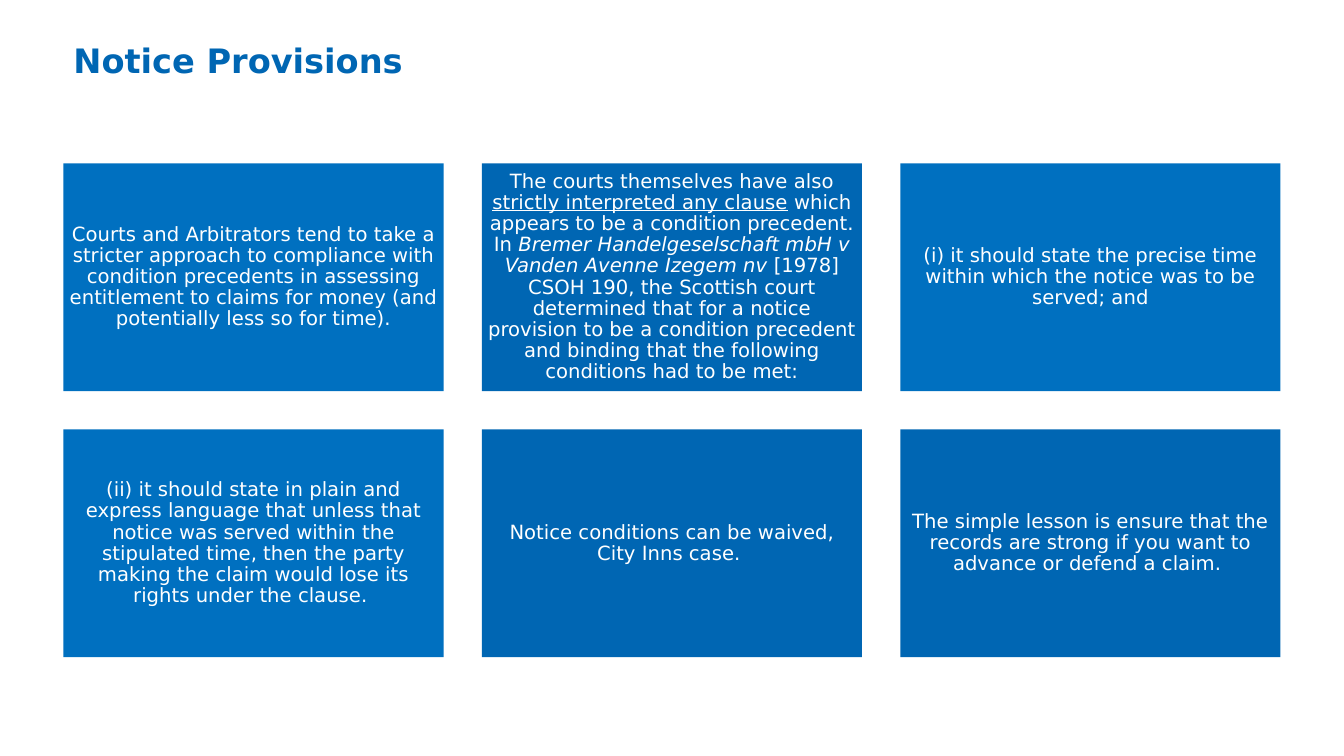
from dataclasses import dataclass

from pptx import Presentation
from pptx import util as u
from pptx.dml.color import RGBColor
from pptx.enum import shapes, text


@dataclass(frozen=True)
class Theme:
    font: str = "DejaVu Sans"
    bright: str = "0070C0"
    deep: str = "0066B3"
    white: str = "FFFFFF"
    title_size: int = 24
    card_size: int = 14
    line_spacing: float = 0.9


THEME = Theme()
SLIDE_W, SLIDE_H = 13.33, 7.5
LEFT, TOP = 0.63, 1.62
CARD_W, CARD_H, GAP = 3.77, 2.26, 0.38
COLUMNS = 3
INSET = 0.06
TITLE_TOP, TITLE_H = 0.44, 0.36

UNDERLINE = {"underline": True}
ITALIC = {"italic": True}

# Each card is its fill and its runs of (wording, format).
CARDS = [
    (THEME.bright, [("Courts and Arbitrators tend to take a stricter approach to compliance "
                     "with condition precedents in assessing entitlement to claims for money "
                     "(and potentially less so for time).", {})]),
    (THEME.deep, [("The courts themselves have also ", {}),
                  ("strictly interpreted any clause", UNDERLINE),
                  (" which appears to be a condition precedent. In ", {}),
                  ("Bremer Handelgeselschaft mbH v Vanden Avenne Izegem nv ", ITALIC),
                  ("[1978] CSOH 190, the Scottish court determined that for a notice "
                   "provision to be a condition precedent and binding that the following "
                   "conditions had to be met:", {})]),
    (THEME.bright, [("(i) it should state the precise time within which the notice was "
                     "to be served; and", {})]),
    (THEME.bright, [("(ii) it should state in plain and express language that unless that "
                     "notice was served within the stipulated time, then the party making "
                     "the claim would lose its rights under the clause. ", {})]),
    (THEME.deep, [("Notice conditions can be waived, City Inns case. ", {})]),
    (THEME.deep, [("The simple lesson is ensure that the records are strong if you want "
                   "to advance or defend a claim. ", {})]),
]


def set_attrs(obj, values):
    for name, value in values.items():
        setattr(obj, name, value)


def inches(*lengths):
    return [u.Inches(length) for length in lengths]


def write(tf, runs, size, color, align):
    """Fill a text frame with one paragraph of (wording, format) runs."""
    set_attrs(tf, {"word_wrap": True, "vertical_anchor": text.MSO_ANCHOR.MIDDLE})
    p = tf.paragraphs[0]
    set_attrs(p, {"alignment": align, "line_spacing": THEME.line_spacing})
    for wording, style in runs:
        r = p.add_run()
        r.text = wording
        set_attrs(r.font, {"name": THEME.font, "size": u.Pt(size), **style})
        r.font.color.rgb = RGBColor.from_string(color)


def add_title(s, wording):
    sp = s.shapes.add_textbox(*inches(LEFT, TITLE_TOP, SLIDE_W - 2 * LEFT, TITLE_H))
    write(sp.text_frame, [(wording, {"bold": True})], THEME.title_size, THEME.deep,
          text.PP_ALIGN.LEFT)


def add_card(s, column, row, fill, runs):
    sp = s.shapes.add_shape(
        shapes.MSO_SHAPE.RECTANGLE,
        *inches(LEFT + column * (CARD_W + GAP), TOP + row * (CARD_H + GAP), CARD_W, CARD_H))
    sp.shadow.inherit = False
    sp.fill.solid()
    sp.fill.fore_color.rgb = RGBColor.from_string(fill)
    sp.line.fill.background()
    sides = ("left", "top", "right", "bottom")
    set_attrs(sp.text_frame, {f"margin_{side}": u.Inches(INSET) for side in sides})
    write(sp.text_frame, runs, THEME.card_size, THEME.white, text.PP_ALIGN.CENTER)


def main():
    prs = Presentation()
    prs.slide_width, prs.slide_height = inches(SLIDE_W, SLIDE_H)
    s = prs.slides.add_slide(prs.slide_layouts[6])
    for i, (fill, runs) in enumerate(CARDS):
        row, column = divmod(i, COLUMNS)
        add_card(s, column, row, fill, runs)
    add_title(s, "Notice Provisions")
    prs.save("out.pptx")


if __name__ == "__main__":
    main()
